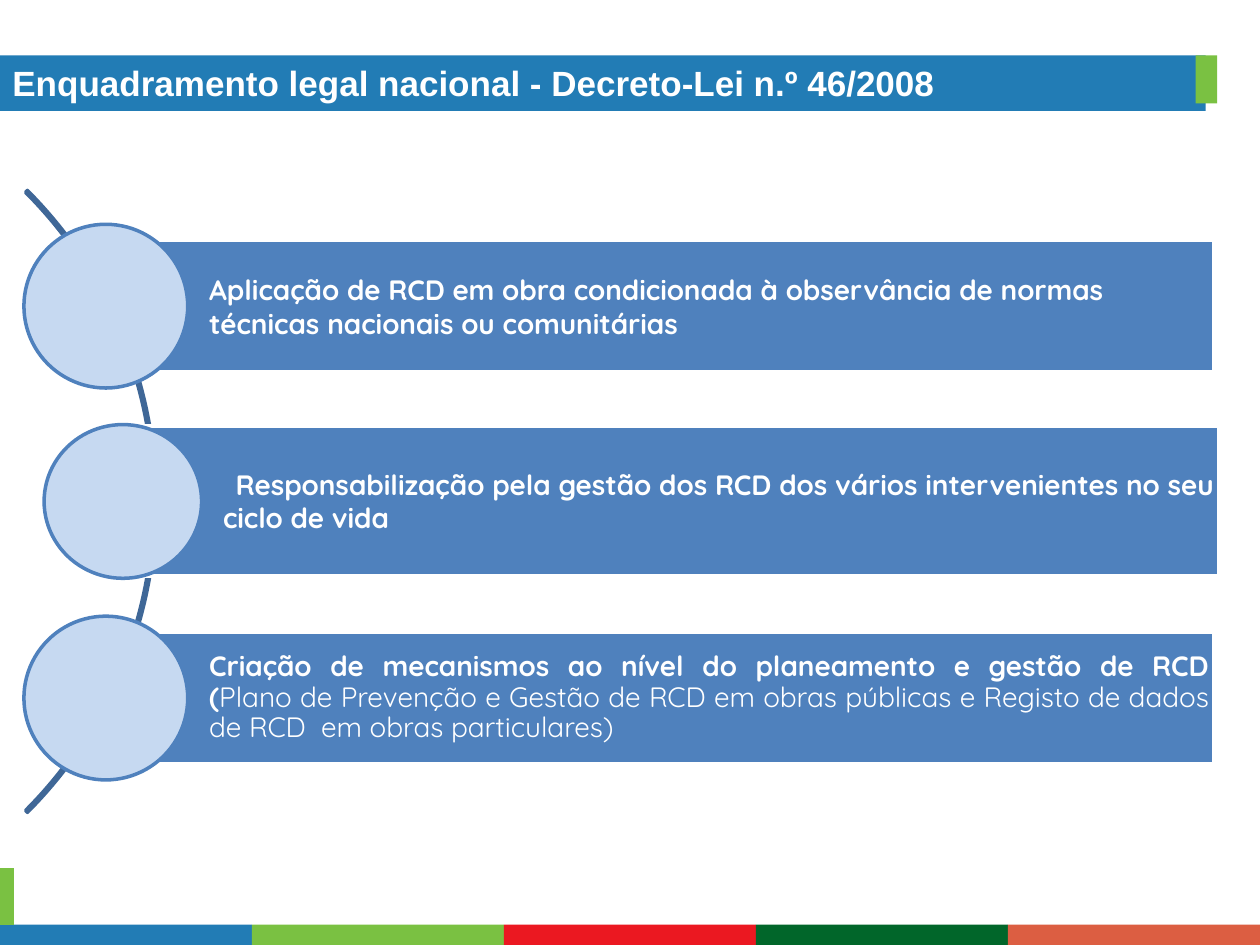
from dataclasses import dataclass

from pptx import Presentation
from pptx.dml.color import RGBColor
from pptx.enum.shapes import MSO_SHAPE as Shape
from pptx.enum.text import MSO_ANCHOR as Anchor, PP_ALIGN as Align
from pptx.util import Inches, Pt


@dataclass(frozen=True)
class Theme:
    blue: str = "227CB5"
    green: str = "7AC142"
    footer: tuple = ("227CB5", "7AC142", "EB1821", "01662A", "DC5E42")
    bar: str = "4F81BD"
    disc: str = "C6D9F1"
    arc: str = "3F6797"
    white: str = "FFFFFF"
    title_font: str = "Arial"
    body_font: str = "Quicksand"
    title_size: int = 20
    body_size: int = 16
    outline: int = 2


THEME = Theme()
WIDTH, HEIGHT = Inches(10), Inches(7.5)

# Each item: bar area, disc area, alignment, first-line indent, line spacing, (text, bold) spans.
# Areas are left, top, width, height in percent of the slide.
ITEMS = [
    ((8.4, 25.47, 87.9, 13.87), (1.9, 23.73, 13, 17.33), Align.LEFT, 0, 1,
     [("Aplicação de RCD em obra condicionada à observância de normas "
       "técnicas nacionais ou comunitárias", True)]),
    ((9.5, 45.07, 87.2, 15.87), (3.5, 44.93, 12.5, 16.27), Align.JUSTIFY, 0.1, 1,
     [("Responsabilização pela gestão dos RCD dos vários intervenientes "
       "no seu ciclo de vida", True)]),
    ((8.4, 66.93, 87.9, 13.87), (1.9, 65.2, 13, 17.33), Align.JUSTIFY, 0, 0.9,
     [("Criação de mecanismos ao nível do planeamento e gestão de RCD\v(", True),
      ("Plano de Prevenção e Gestão de RCD em obras públicas e Registo de dados "
       "de RCD  em obras particulares)", False)]),
]


def add_figure(page, kind, area, fill=None, line=None):
    """Add a preset shape whose area is given in percent of the slide."""
    left, top, width, height = area
    figure = page.shapes.add_shape(
        kind, int(WIDTH * left / 100), int(HEIGHT * top / 100),
        int(WIDTH * width / 100), int(HEIGHT * height / 100))
    figure.shadow.inherit = False
    if fill:
        figure.fill.solid()
        figure.fill.fore_color.rgb = RGBColor.from_string(fill)
    else:
        figure.fill.background()
    if line:
        figure.line.color.rgb = RGBColor.from_string(line)
        figure.line.width = Pt(THEME.outline)
    else:
        figure.line.fill.background()
    return figure


def style_span(span, font, size, bold):
    span.font.name = font
    span.font.size = Pt(size)
    span.font.bold = bold
    span.font.color.rgb = RGBColor.from_string(THEME.white)


def add_title(page, text):
    band = add_figure(page, Shape.RECTANGLE, (0, 5.87, 95.7, 5.87), THEME.blue)
    frame = band.text_frame
    frame.text = text
    frame.word_wrap = True
    frame.vertical_anchor = Anchor.TOP
    para = frame.paragraphs[0]
    para.alignment = Align.LEFT
    style_span(para.runs[0], THEME.title_font, THEME.title_size, True)
    add_figure(page, Shape.RECTANGLE, (94.9, 5.87, 1.7, 5.07), THEME.green)


def add_footer(page):
    step = 100 / len(THEME.footer)
    for column, color in enumerate(THEME.footer):
        add_figure(page, Shape.RECTANGLE, (column * step, 97.85, step, 2.15), color)
    add_figure(page, Shape.RECTANGLE, (0, 91.87, 1.1, 6), THEME.green)


def add_arc(page):
    arc = add_figure(page, Shape.BLOCK_ARC, (-57.4, 6.53, 69.8, 93.07), line=THEME.arc)
    for index, value in enumerate((189, 27, 0.003)):
        arc.adjustments[index] = value


def add_item(page, bar_area, disc_area, alignment, indent, spacing, spans):
    bar = add_figure(page, Shape.RECTANGLE, bar_area, THEME.bar, THEME.white)
    frame = bar.text_frame
    frame.word_wrap = True
    frame.vertical_anchor = Anchor.MIDDLE
    frame.margin_left = Inches(0.82)
    frame.margin_right = frame.margin_top = frame.margin_bottom = Inches(0.03)
    para = frame.paragraphs[0]
    para.alignment = alignment
    para.line_spacing = spacing
    if indent:
        para._p.get_or_add_pPr().set("indent", str(Inches(indent)))
    for text, bold in spans:
        for number, part in enumerate(text.split("\v")):
            if number:
                para.add_line_break()
            span = para.add_run()
            span.text = part
            style_span(span, THEME.body_font, THEME.body_size, bold)
    add_figure(page, Shape.OVAL, disc_area, THEME.disc, THEME.bar)


def main():
    deck = Presentation()
    deck.slide_width, deck.slide_height = WIDTH, HEIGHT
    page = deck.slides.add_slide(deck.slide_layouts[6])

    # Frame of the page
    add_footer(page)
    add_title(page, "Enquadramento legal nacional - Decreto-Lei n.º 46/2008")

    # Curved list
    add_arc(page)
    for item in ITEMS:
        add_item(page, *item)

    deck.save("out.pptx")


if __name__ == "__main__":
    main()
